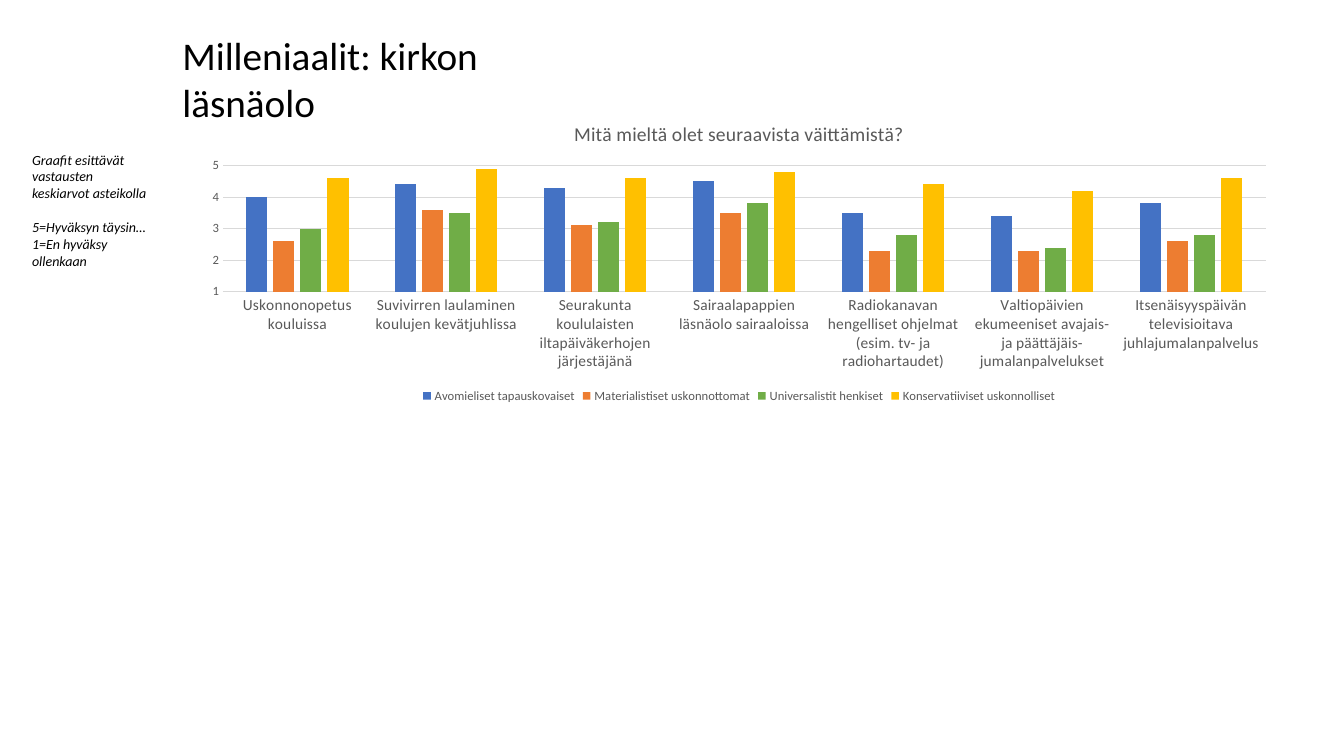
"""Build a slide on how millennials view the presence of the church."""
from dataclasses import dataclass
from typing import Any

from pptx import Presentation
from pptx.chart.data import CategoryChartData
from pptx.dml.color import RGBColor
from pptx.enum.chart import XL_CHART_TYPE, XL_LEGEND_POSITION, XL_TICK_MARK
from pptx.util import Inches, Pt

CLUSTERED = XL_CHART_TYPE.COLUMN_CLUSTERED
BOTTOM = XL_LEGEND_POSITION.BOTTOM
NO_TICK = XL_TICK_MARK.NONE
FONT = "Calibri"
COLOURS = {
    "text": "000000",
    "label": "595959",
    "grid": "D9D9D9",
    "blue": "4472C4",
    "orange": "ED7D31",
    "green": "70AD47",
    "yellow": "FFC000",
}


@dataclass(frozen=True)
class TextBlock:
    left: float
    top: float
    width: float
    height: float
    lines: tuple[str, ...]
    size: float
    italic: bool = False
    gap_after_first: float = 0


@dataclass(frozen=True)
class Group:
    name: str
    colour: str
    means: tuple[float, ...]


TEXT_BLOCKS = (
    TextBlock(1.71, 0.26, 4.49, 0.57, ("Milleniaalit: kirkon läsnäolo",), 28),
    TextBlock(
        0.22, 1.45, 1.33, 1.45,
        ("Graafit esittävät vastausten keskiarvot asteikolla",
         "5=Hyväksyn täysin…",
         "1=En hyväksy ollenkaan"),
        10, italic=True, gap_after_first=12,
    ),
)
CHART_TITLE = "Mitä mieltä olet seuraavista väittämistä?"
STATEMENTS = (
    "Uskonnonopetus kouluissa",
    "Suvivirren laulaminen koulujen kevätjuhlissa",
    "Seurakunta koululaisten iltapäiväkerhojen järjestäjänä",
    "Sairaalapappien läsnäolo sairaaloissa",
    "Radiokanavan hengelliset ohjelmat (esim. tv- ja radiohartaudet)",
    "Valtiopäivien ekumeeniset avajais- ja päättäjäis- jumalanpalvelukset",
    "Itsenäisyyspäivän televisioitava juhlajumalanpalvelus",
)
GROUPS = (
    Group("Avomieliset tapauskovaiset", "blue", (4, 4.4, 4.3, 4.5, 3.5, 3.4, 3.8)),
    Group("Materialistiset uskonnottomat", "orange", (2.6, 3.6, 3.1, 3.5, 2.3, 2.3, 2.6)),
    Group("Universalistit henkiset", "green", (3, 3.5, 3.2, 3.8, 2.8, 2.4, 2.8)),
    Group("Konservatiiviset uskonnolliset", "yellow", (4.6, 4.9, 4.6, 4.8, 4.4, 4.2, 4.6)),
)


def rgb(name: str) -> RGBColor:
    return RGBColor.from_string(COLOURS[name])


def set_values(target: Any, values: dict[str, Any]) -> None:
    for name, value in values.items():
        setattr(target, name, value)


def style_font(font: Any, size: float, colour: str, italic: bool = False) -> None:
    set_values(font, {"name": FONT, "size": Pt(size), "bold": False, "italic": italic})
    font.color.rgb = rgb(colour)


def style_line(line: Any) -> None:
    line.color.rgb = rgb("grid")
    line.width = Pt(0.75)


def draw_text(page: Any, block: TextBlock) -> None:
    box = page.shapes.add_textbox(
        Inches(block.left), Inches(block.top), Inches(block.width), Inches(block.height)
    )
    frame = box.text_frame
    frame.word_wrap = True
    for index, line in enumerate(block.lines):
        para = frame.paragraphs[0] if index == 0 else frame.add_paragraph()
        if index == 0 and block.gap_after_first:
            para.space_after = Pt(block.gap_after_first)
        span = para.add_run()
        span.text = line
        style_font(span.font, block.size, "text", block.italic)


def draw_chart(page: Any) -> None:
    data = CategoryChartData()
    data.categories = STATEMENTS
    for group in GROUPS:
        data.add_series(group.name, group.means)
    chart = page.shapes.add_chart(
        CLUSTERED, Inches(1.89), Inches(1.04), Inches(10.88), Inches(3), data
    ).chart
    style_font(chart.font, 10, "text")

    chart.has_title = True
    title = chart.chart_title
    title.include_in_layout = False
    span = title.text_frame.paragraphs[0].add_run()
    span.text = CHART_TITLE
    style_font(span.font, 14, "label")

    chart.has_legend = True
    set_values(chart.legend, {"position": BOTTOM, "include_in_layout": False})
    style_font(chart.legend.font, 9, "label")

    plot = chart.plots[0]
    set_values(plot, {"gap_width": 219, "overlap": -27, "vary_by_categories": False})
    for series, group in zip(plot.series, GROUPS):
        series.format.fill.solid()
        series.format.fill.fore_color.rgb = rgb(group.colour)

    for axis, size in ((chart.category_axis, 11), (chart.value_axis, 9)):
        set_values(axis, {"major_tick_mark": NO_TICK, "minor_tick_mark": NO_TICK})
        style_font(axis.tick_labels.font, size, "label")
    style_line(chart.category_axis.format.line)
    scale = chart.value_axis
    set_values(scale, {"minimum_scale": 1, "maximum_scale": 5, "major_unit": 1,
                       "has_major_gridlines": True})
    scale.format.line.fill.background()
    style_line(scale.major_gridlines.format.line)


def main() -> None:
    deck = Presentation()
    set_values(deck, {"slide_width": Inches(13.33), "slide_height": Inches(7.5)})
    page = deck.slides.add_slide(deck.slide_layouts[6])
    draw_chart(page)
    for block in TEXT_BLOCKS:
        draw_text(page, block)
    deck.save("out.pptx")


if __name__ == "__main__":
    main()
